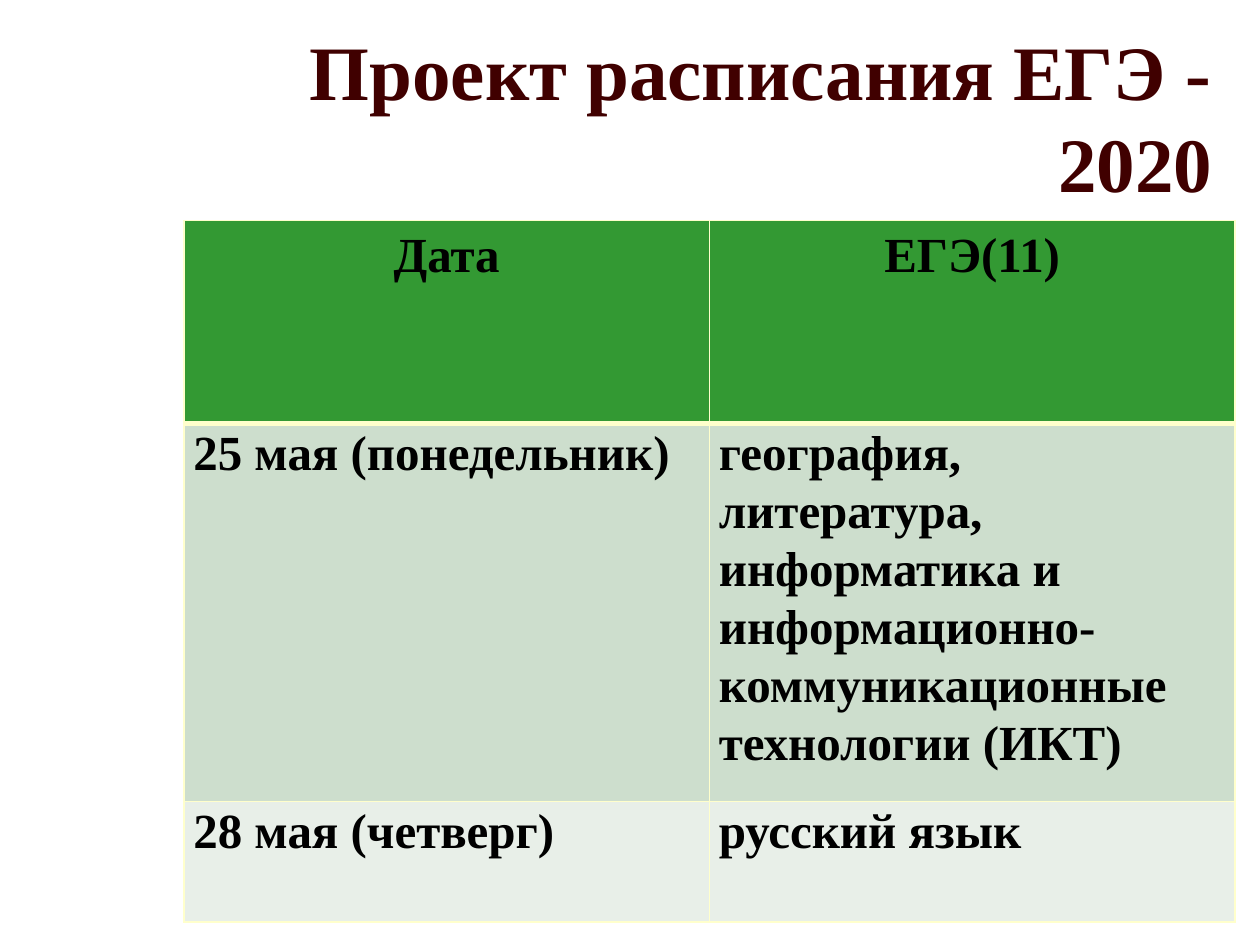
from dataclasses import dataclass

from lxml import etree
from pptx import Presentation
from pptx.dml.color import RGBColor
from pptx.enum.text import MSO_ANCHOR, MSO_AUTO_SIZE, PP_ALIGN
from pptx.oxml.ns import qn
from pptx.util import Pt

LEFT, CENTER, RIGHT = PP_ALIGN.LEFT, PP_ALIGN.CENTER, PP_ALIGN.RIGHT
MIDDLE = MSO_ANCHOR.MIDDLE
NO_AUTOFIT = MSO_AUTO_SIZE.NONE
TITLE_ONLY = 5
FONT = "Times New Roman"
COLORS = {
    "title": "400000",
    "title_box": "FFFFFF",
    "text": "000000",
    "header": "339933",
    "odd": "CDDECD",
    "even": "E8EFE8",
    "border": "FFFFCC",
}
THIN, THICK = 1, 3
COLUMN_WIDTH = 300.3


@dataclass
class ScheduleRow:
    date: str
    subjects: str
    height: float
    fill: str
    align: PP_ALIGN = LEFT
    spacing: float = 1.07
    top: float = THIN
    bottom: float = THIN


ROWS = [
    ScheduleRow("Дата", "ЕГЭ(11)", 116, "header", CENTER, 1.15, bottom=THICK),
    ScheduleRow(
        "25 мая (понедельник)",
        "география, литература, информатика и "
        "информационно-коммуникационные технологии (ИКТ)",
        216, "odd", top=THICK,
    ),
    ScheduleRow("28 мая (четверг)", "русский язык", 69, "even"),
]


def rgb(name: str) -> RGBColor:
    return RGBColor.from_string(COLORS[name])


def style_paragraph(para, size: float, color: str, align: PP_ALIGN, spacing: float) -> None:
    para.alignment = align
    para.line_spacing = spacing
    para.font.name = FONT
    para.font.size = Pt(size)
    para.font.bold = True
    para.font.color.rgb = rgb(color)


def set_borders(cell, top: float, bottom: float) -> None:
    """Line all four sides; the lines must precede the fill in the cell XML."""
    properties = cell._tc.get_or_add_tcPr()
    widths = {"a:lnL": THIN, "a:lnR": THIN, "a:lnT": top, "a:lnB": bottom}
    for index, (tag, width) in enumerate(widths.items()):
        line = etree.Element(qn(tag), w=str(Pt(width)))
        fill = etree.SubElement(line, qn("a:solidFill"))
        etree.SubElement(fill, qn("a:srgbClr"), val=COLORS["border"])
        properties.insert(index, line)


def fill_cell(cell, text: str, row: ScheduleRow) -> None:
    cell.fill.solid()
    cell.fill.fore_color.rgb = rgb(row.fill)
    cell.margin_left = cell.margin_right = Pt(5.4)
    cell.margin_top = cell.margin_bottom = 0
    cell.text = text
    style_paragraph(cell.text_frame.paragraphs[0], 28, "text", row.align, row.spacing)
    set_borders(cell, row.top, row.bottom)


def add_title(slide, text: str) -> None:
    title = slide.shapes.title
    title.left, title.top, title.width, title.height = Pt(70.5), Pt(21.5), Pt(629.5), Pt(89.5)
    title.fill.solid()
    title.fill.fore_color.rgb = rgb("title_box")
    title.line.color.rgb = rgb("title_box")
    title.line.width = Pt(1.5)
    frame = title.text_frame
    frame.text = text
    frame.word_wrap = True
    frame.auto_size = NO_AUTOFIT
    frame.vertical_anchor = MIDDLE
    frame.margin_left = Pt(15)
    style_paragraph(frame.paragraphs[0], 44, "title", RIGHT, 1.0)


def add_schedule(slide, rows: list[ScheduleRow]) -> None:
    height = sum(row.height for row in rows)
    table = slide.shapes.add_table(
        len(rows), 2, Pt(105.1), Pt(126), Pt(2 * COLUMN_WIDTH), Pt(height)
    ).table
    for column in table.columns:
        column.width = Pt(COLUMN_WIDTH)
    for index, row in enumerate(rows):
        table.rows[index].height = Pt(row.height)
        for column, text in enumerate((row.date, row.subjects)):
            fill_cell(table.cell(index, column), text, row)


def main() -> None:
    deck = Presentation()
    deck.slide_width, deck.slide_height = Pt(720), Pt(540)
    slide = deck.slides.add_slide(deck.slide_layouts[TITLE_ONLY])
    add_title(slide, "Проект расписания ЕГЭ - 2020")
    add_schedule(slide, ROWS)
    deck.save("out.pptx")


if __name__ == "__main__":
    main()
